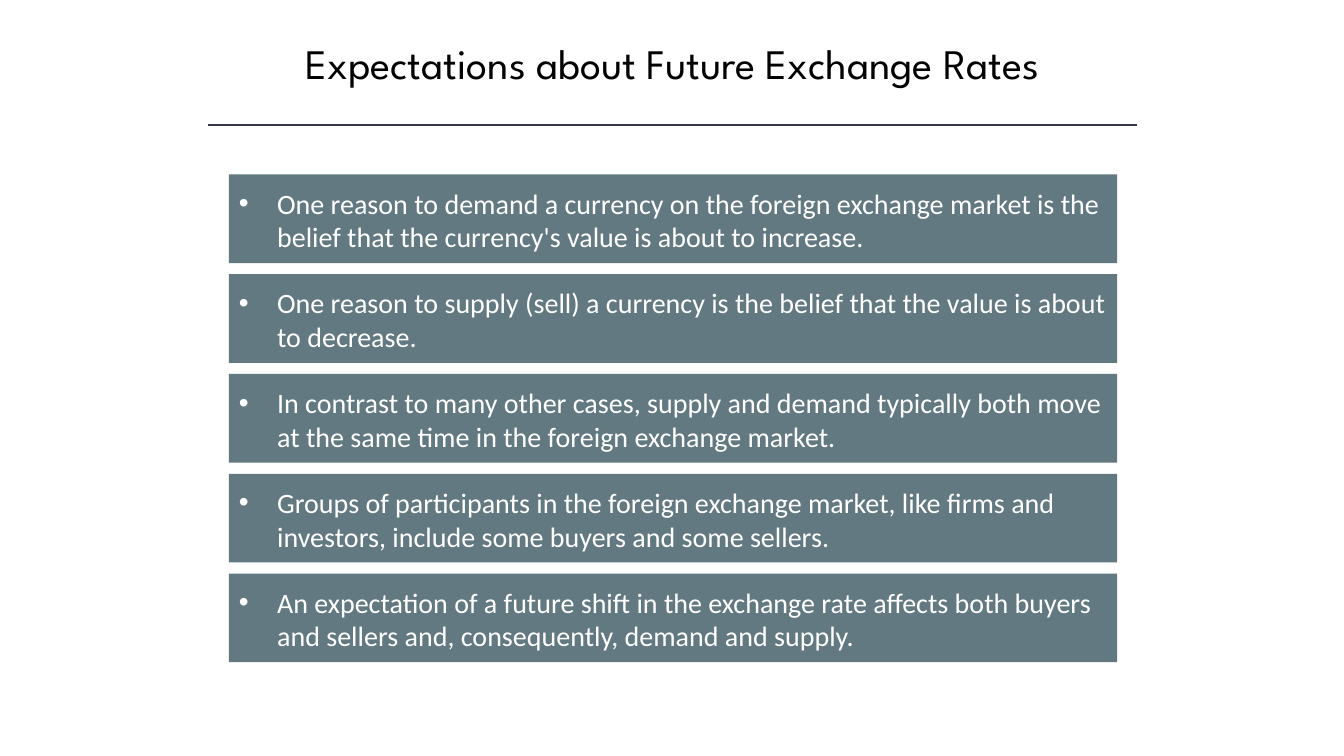
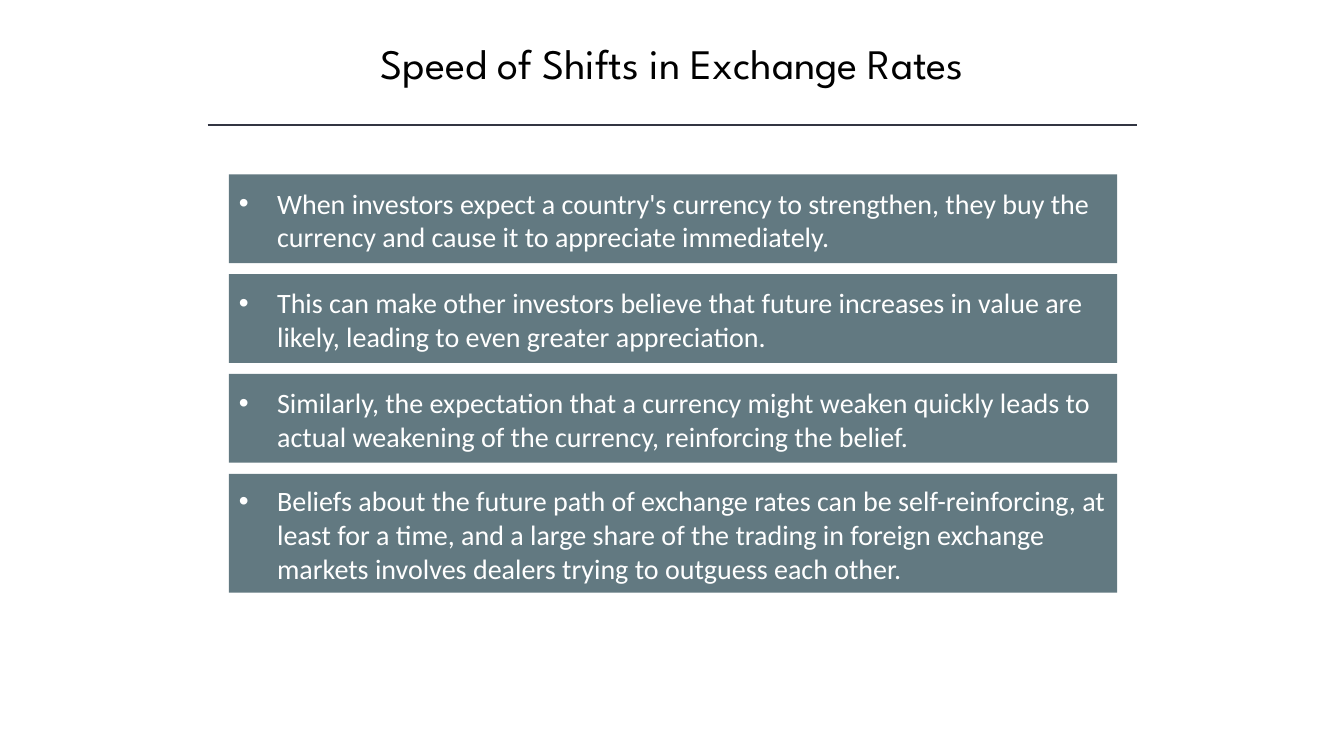
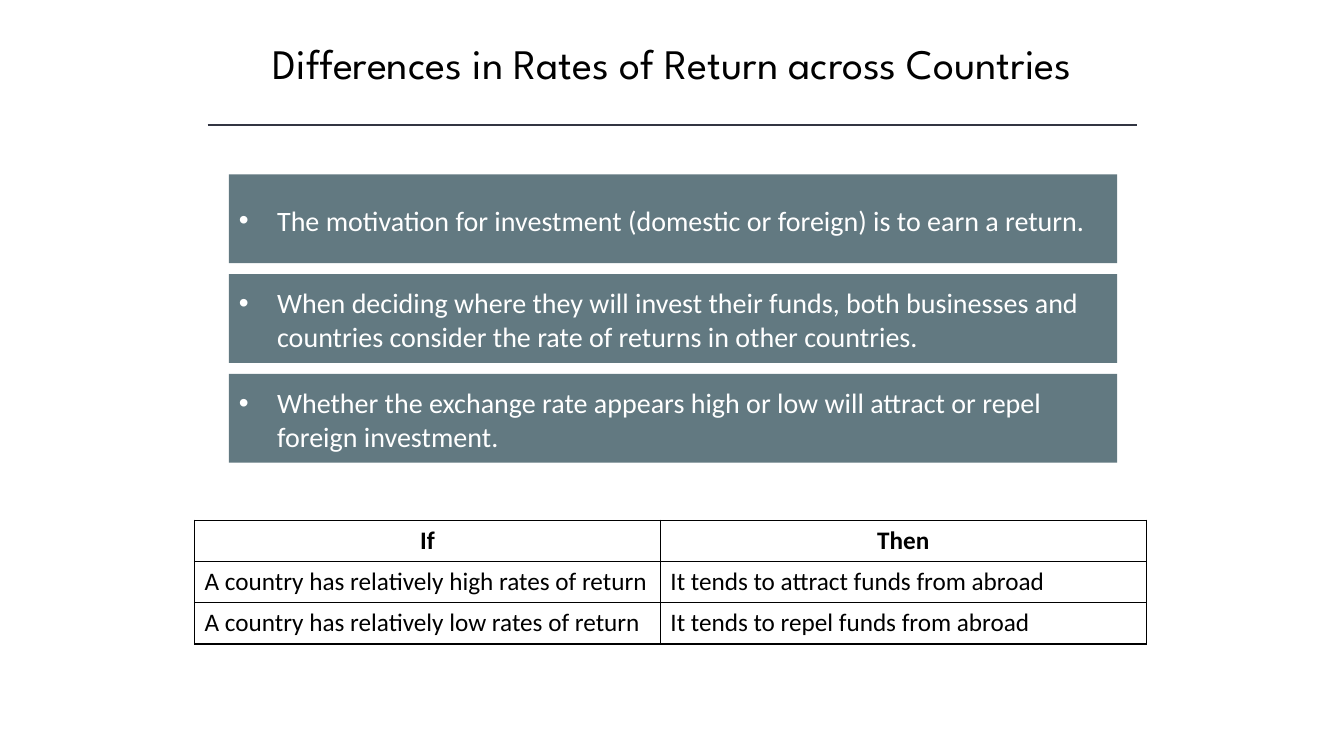
from dataclasses import dataclass

from lxml import etree
from pptx import Presentation
from pptx.dml.color import RGBColor
from pptx.enum.shapes import MSO_CONNECTOR, MSO_SHAPE
from pptx.enum.text import MSO_ANCHOR, MSO_AUTO_SIZE, PP_ALIGN
from pptx.oxml.ns import qn
from pptx.slide import Slide
from pptx.table import _Cell
from pptx.text.text import _Paragraph
from pptx.util import Inches, Pt

# Shared style
TITLE_FONT, BODY_FONT = "League Spartan", "Calibri"
BLACK, WHITE, SLATE, RULE = "000000", "FFFFFF", "627981", "323542"
BAND_LEFT, BAND_TOP, BAND_WIDTH, BAND_PITCH = 2.27, 1.73, 8.81, 0.99
BAND_HEIGHT, TALL_BAND_HEIGHT = 0.88, 1.18
BULLET_INDENT = 0.38


@dataclass(frozen=True)
class Band:
    statement: str
    height: float = BAND_HEIGHT


@dataclass(frozen=True)
class Page:
    title: str
    bands: tuple[Band, ...]
    outcomes: tuple[tuple[str, str], ...] = ()


PAGES = (
    Page("Expectations about Future Exchange Rates", (
        Band("One reason to demand a currency on the foreign exchange market is the "
             "belief that the currency's value is about to increase."),
        Band("One reason to supply (sell) a currency is the belief that the value is "
             "about to decrease."),
        Band("In contrast to many other cases, supply and demand typically both move "
             "at the same time in the foreign exchange market."),
        Band("Groups of participants in the foreign exchange market, like firms and "
             "investors, include some buyers and some sellers."),
        Band("An expectation of a future shift in the exchange rate affects both buyers "
             "and sellers and, consequently, demand and supply."),
    )),
    Page("Speed of Shifts in Exchange Rates", (
        Band("When investors expect a country's currency to strengthen, they buy the "
             "currency and cause it to appreciate immediately."),
        Band("This can make other investors believe that future increases in value are "
             "likely, leading to even greater appreciation."),
        Band("Similarly, the expectation that a currency might weaken quickly leads to "
             "actual weakening of the currency, reinforcing the belief."),
        Band("Beliefs about the future path of exchange rates can be self-reinforcing, at "
             "least for a time, and a large share of the trading in foreign exchange "
             "markets involves dealers trying to outguess each other.", TALL_BAND_HEIGHT),
    )),
    Page("Differences in Rates of Return across Countries", (
        Band("The motivation for investment (domestic or foreign) is to earn a return."),
        Band("When deciding where they will invest their funds, both businesses and "
             "countries consider the rate of returns in other countries."),
        Band("Whether the exchange rate appears high or low will attract or repel "
             "foreign investment."),
    ), (
        ("If", "Then"),
        ("A country has relatively high rates of return",
         "It tends to attract funds from abroad"),
        ("A country has relatively low rates of return",
         "It tends to repel funds from abroad"),
    )),
)


def color(value: str) -> RGBColor:
    return RGBColor.from_string(value)


def style(paragraph: _Paragraph, font: str, size: int, ink: str,
          align: PP_ALIGN = PP_ALIGN.LEFT, bold: bool = False) -> None:
    paragraph.alignment = align
    paragraph.font.name = font
    paragraph.font.size = Pt(size)
    paragraph.font.bold = bold
    paragraph.font.color.rgb = color(ink)


def add_bullet(paragraph: _Paragraph) -> None:
    properties = paragraph._p.get_or_add_pPr()
    properties.set("marL", str(Inches(BULLET_INDENT)))
    properties.set("indent", str(-Inches(BULLET_INDENT)))
    etree.SubElement(properties, qn("a:buFont")).set("typeface", "Arial")
    etree.SubElement(properties, qn("a:buChar")).set("char", "•")


def add_heading(slide: Slide, text: str) -> None:
    # Title
    title = slide.shapes.title
    title.left, title.top = Inches(1.67), Inches(0.32)
    title.width, title.height = Inches(10), Inches(0.61)
    frame = title.text_frame
    frame.text = text
    frame.auto_size = MSO_AUTO_SIZE.NONE
    frame.vertical_anchor = MSO_ANCHOR.MIDDLE
    style(frame.paragraphs[0], TITLE_FONT, 30, BLACK, PP_ALIGN.CENTER)

    # Rule under the title
    rule = slide.shapes.add_connector(
        MSO_CONNECTOR.STRAIGHT, Inches(2.06), Inches(1.24), Inches(11.28), Inches(1.24))
    rule.line.color.rgb = color(RULE)
    rule.line.width = Pt(1)
    etree.SubElement(rule._element.spPr, qn("a:effectLst"))


def add_band(slide: Slide, band: Band, index: int) -> None:
    box = slide.shapes.add_shape(
        MSO_SHAPE.RECTANGLE, Inches(BAND_LEFT), Inches(BAND_TOP + index * BAND_PITCH),
        Inches(BAND_WIDTH), Inches(band.height))
    box.shadow.inherit = False
    box.fill.solid()
    box.fill.fore_color.rgb = color(SLATE)
    box.line.fill.background()
    frame = box.text_frame
    frame.word_wrap = True
    frame.vertical_anchor = MSO_ANCHOR.MIDDLE
    frame.margin_top, frame.margin_bottom = Inches(0.07), Inches(0.05)
    frame.margin_left, frame.margin_right = Inches(0.1), Inches(0.08)
    frame.text = band.statement
    style(frame.paragraphs[0], BODY_FONT, 20, WHITE)
    add_bullet(frame.paragraphs[0])


def add_borders(cell: _Cell) -> None:
    properties = cell._tc.get_or_add_tcPr()
    for position, side in enumerate(("a:lnL", "a:lnR", "a:lnT", "a:lnB")):
        edge = etree.Element(qn(side), w=str(Pt(1)))
        fill = etree.SubElement(edge, qn("a:solidFill"))
        etree.SubElement(fill, qn("a:srgbClr")).set("val", BLACK)
        properties.insert(position, edge)


def add_outcomes(slide: Slide, rows: tuple[tuple[str, str], ...]) -> None:
    widths, row_height = (4.62, 4.82), 0.41
    table = slide.shapes.add_table(
        len(rows), len(widths), Inches(1.93), Inches(5.16),
        Inches(sum(widths)), Inches(row_height * len(rows))).table
    table.first_row = table.horz_banding = False
    for column, width in zip(table.columns, widths):
        column.width = Inches(width)
    for r, row in enumerate(rows):
        for c, text in enumerate(row):
            cell = table.cell(r, c)
            cell.text = text
            cell.fill.background()
            add_borders(cell)
            header = r == 0
            style(cell.text_frame.paragraphs[0], BODY_FONT, 18, BLACK,
                  PP_ALIGN.CENTER if header else PP_ALIGN.LEFT, header)


def main() -> None:
    deck = Presentation()
    deck.slide_width, deck.slide_height = Inches(13.33), Inches(7.5)
    title_only = deck.slide_layouts[5]
    for page in PAGES:
        slide = deck.slides.add_slide(title_only)
        add_heading(slide, page.title)
        for index, band in enumerate(page.bands):
            add_band(slide, band, index)
        if page.outcomes:
            add_outcomes(slide, page.outcomes)
    deck.save("out.pptx")


if __name__ == "__main__":
    main()
